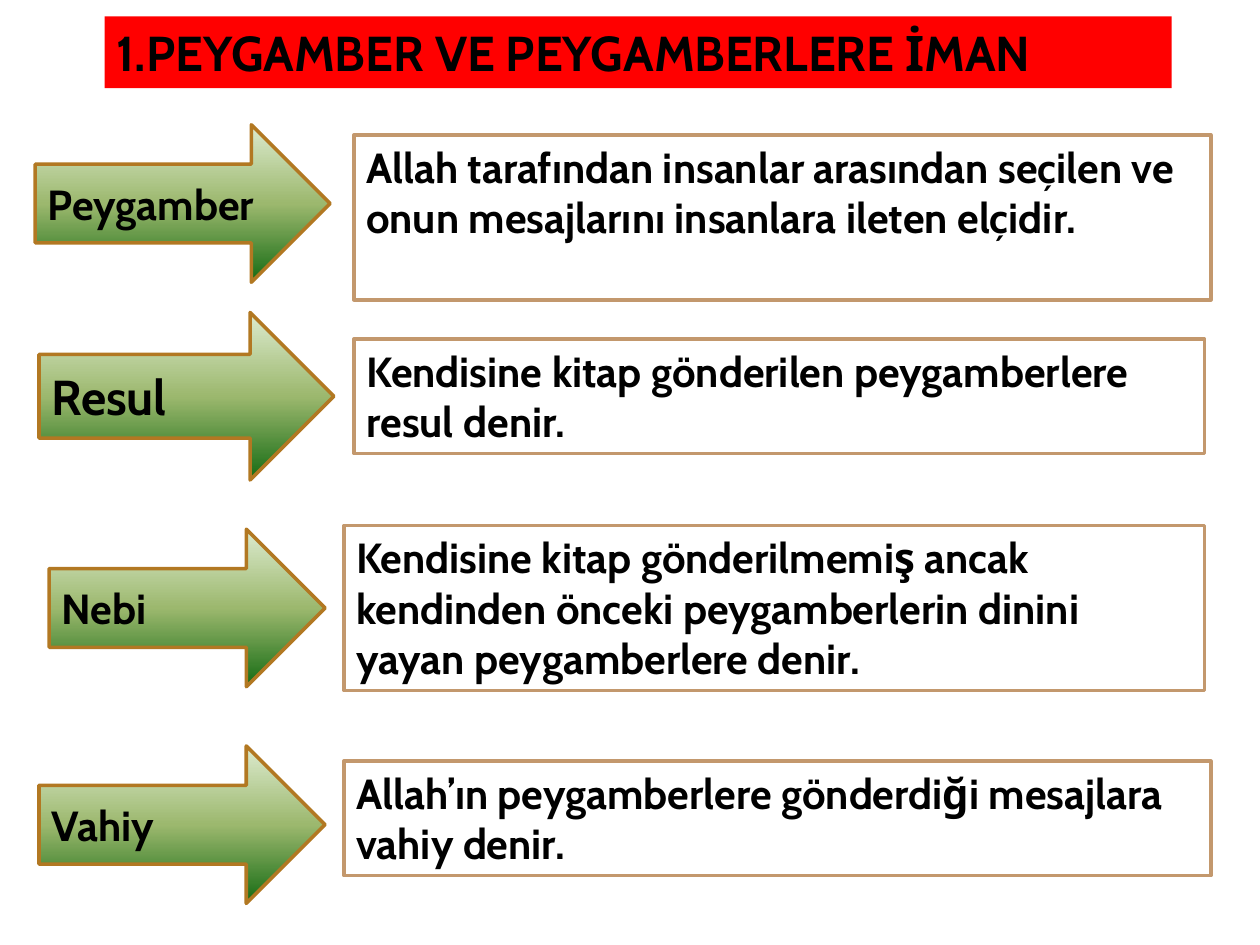
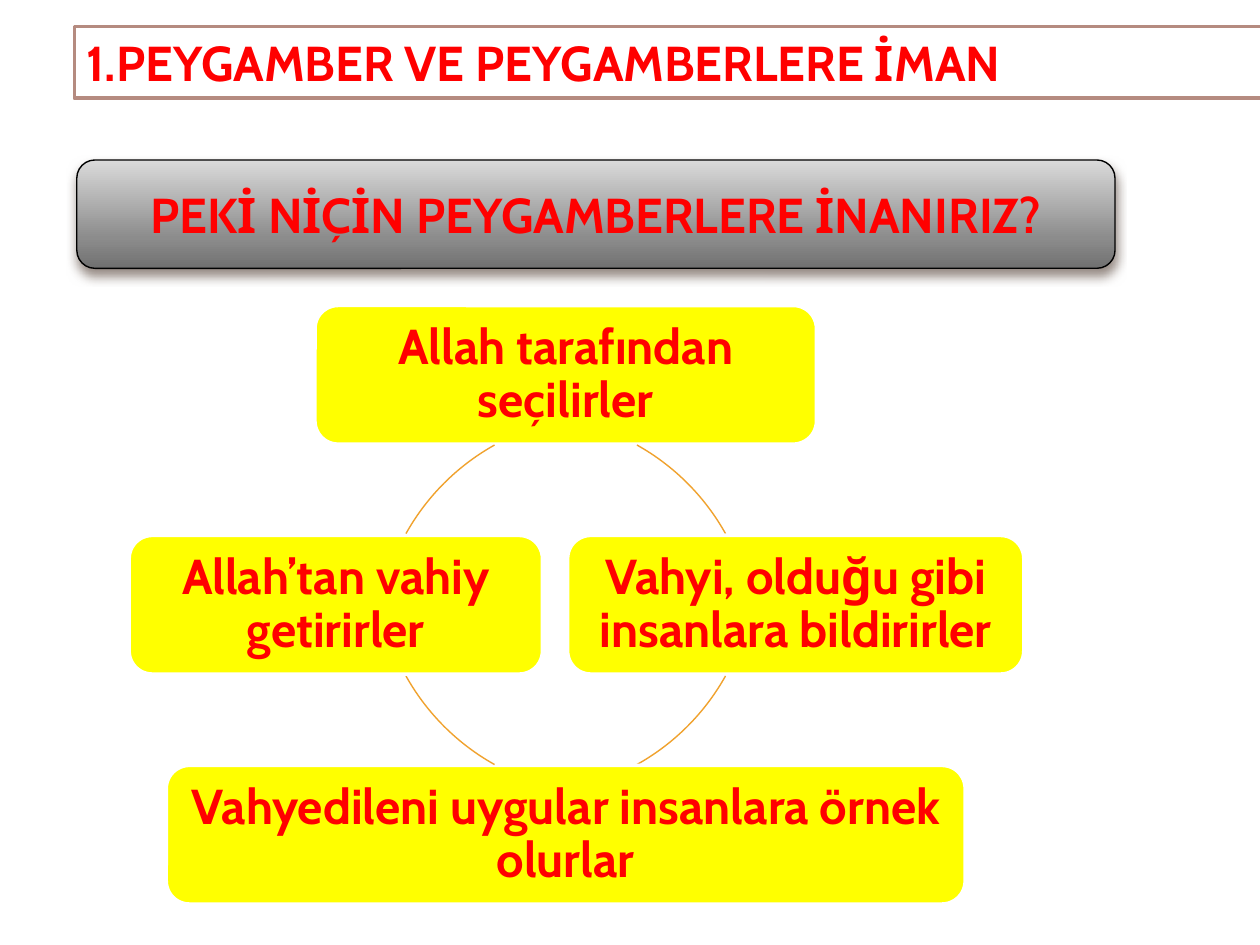
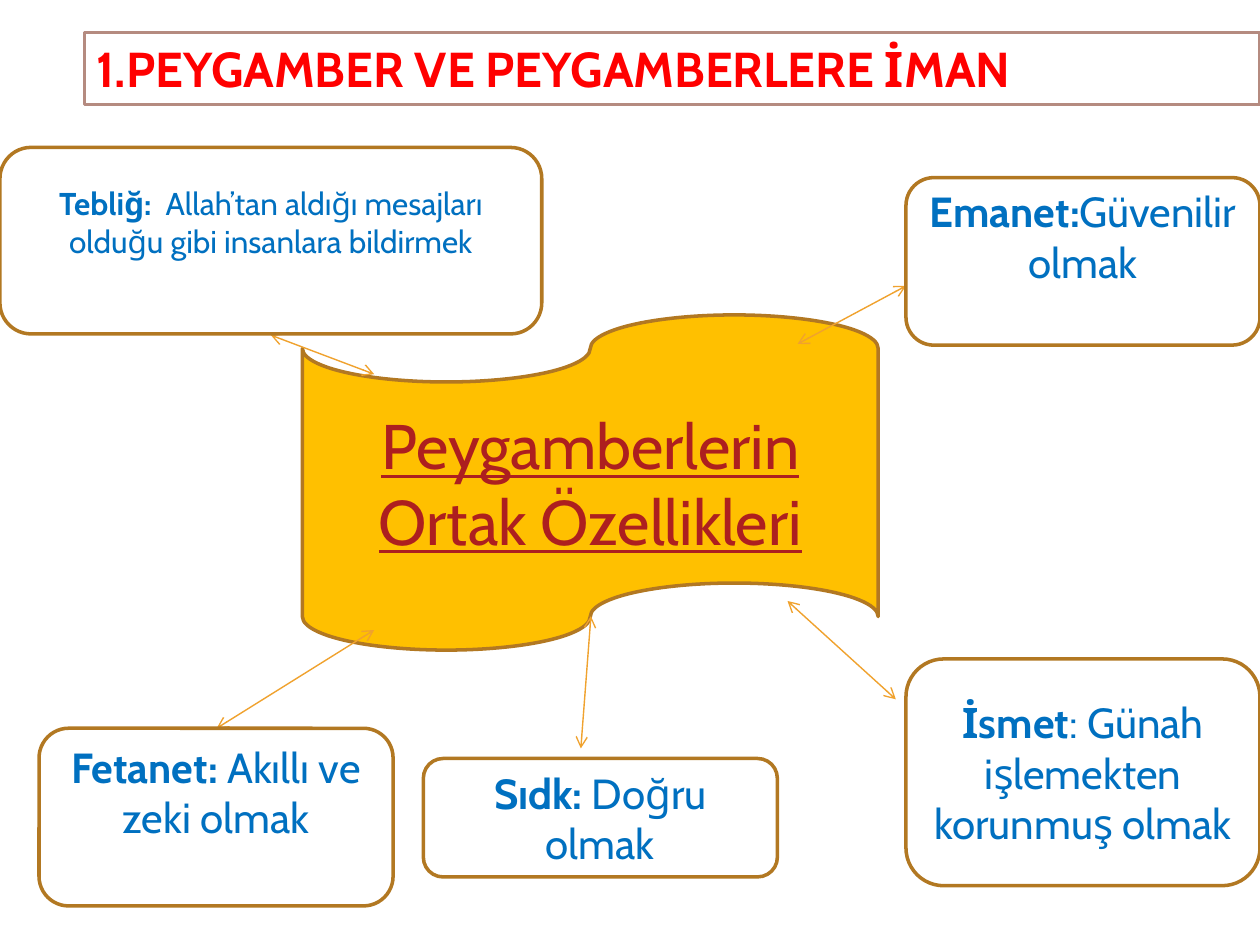
from lxml.etree import SubElement
from pptx import Presentation
from pptx.dml.color import RGBColor
from pptx.enum.shapes import MSO_CONNECTOR, MSO_SHAPE
from pptx.enum.text import MSO_ANCHOR, PP_ALIGN
from pptx.oxml.ns import qn
from pptx.util import Inches, Pt

# Shared style
FONT = "Cabin"
BLACK, WHITE, RED, BLUE = "000000", "FFFFFF", "FF0000", "0070C0"
BROWN, TAN, ROSE, AMBER = "B27822", "C3986D", "B58B80", "F0A22E"
YELLOW, GOLD, WINE = "FFFF00", "FFC000", "AD1F1F"
GREENS = [(0, "DDEBCF"), (50, "9CB86E"), (100, "156B13")]
GREYS = [(0, "DADADA"), (72, "8C8C8C"), (100, "707070")]
TITLE = "1.PEYGAMBER VE PEYGAMBERLERE İMAN"
COLS, ROWS = 100, 75
WIDE, HIGH = Inches(10), Inches(7.5)


def color(code):
    return RGBColor.from_string(code)


def write(shape, runs, size=24, ink=BLACK, bold=True, line=False,
          align=PP_ALIGN.LEFT, anchor=MSO_ANCHOR.MIDDLE, space=None,
          pad=(0.1, 0.05, 0.1, 0.05)):
    """Fill a shape with one paragraph; runs is a string or (text, bold) pairs."""
    frame = shape.text_frame
    frame.word_wrap = True
    frame.vertical_anchor = anchor
    (frame.margin_left, frame.margin_top,
     frame.margin_right, frame.margin_bottom) = map(Inches, pad)
    para = frame.paragraphs[0]
    para.alignment = align
    if space:
        para.line_spacing = space
    for words, thick in [(runs, bold)] if isinstance(runs, str) else runs:
        run = para.add_run()
        run.text = words
        font = run.font
        font.name, font.size, font.bold = FONT, Pt(size), thick
        font.underline = line
        font.color.rgb = color(ink)


class Deck:
    """Holds the file, the current slide and a 100 by 75 grid."""

    def __init__(self):
        self.file = Presentation()
        self.file.slide_width, self.file.slide_height = WIDE, HIGH

    def page(self):
        self.slide = self.file.slides.add_slide(self.file.slide_layouts[6])

    def x(self, col):
        return round(col * WIDE / COLS)

    def y(self, row):
        return round(row * HIGH / ROWS)

    def shape(self, kind, box, fill=None, edge=None, width=2):
        left, top, wide, high = box
        item = self.slide.shapes.add_shape(
            kind, self.x(left), self.y(top), self.x(wide), self.y(high))
        item.shadow.inherit = False
        if fill is None:
            item.fill.background()
        elif isinstance(fill, list):
            self.blend(item, fill)
        else:
            item.fill.solid()
            item.fill.fore_color.rgb = color(fill)
        if edge:
            item.line.color.rgb = color(edge)
            item.line.width = Pt(width)
        else:
            item.line.fill.background()
        return item

    def blend(self, item, stops):
        item.fill.gradient()
        item.fill.gradient_angle = 270
        group = item.element.spPr.find(".//" + qn("a:gsLst"))
        for old in list(group):
            group.remove(old)
        for pos, code in stops:
            stop = SubElement(group, qn("a:gs"), pos=str(pos * 1000))
            SubElement(stop, qn("a:srgbClr"), val=code)

    def shade(self, item, code, alpha, blur, dist):
        group = item.element.spPr.find(qn("a:effectLst"))
        drop = SubElement(group, qn("a:outerShdw"), blurRad=str(Pt(blur)),
                          dist=str(Pt(dist)), dir="5400000", rotWithShape="0")
        tone = SubElement(drop, qn("a:srgbClr"), val=code)
        SubElement(tone, qn("a:alpha"), val=str(alpha * 1000))

    def title(self, left, top, wide, fill=WHITE, edge=ROSE, ink=RED):
        bar = self.shape(MSO_SHAPE.RECTANGLE, (left, top, wide, 5.7), fill, edge)
        write(bar, TITLE, size=28, ink=ink, anchor=MSO_ANCHOR.TOP)

    def term(self, word, box, size):
        arrow = self.shape(MSO_SHAPE.RIGHT_ARROW, box, GREENS, BROWN)
        write(arrow, word, size=size)

    def note(self, words, box):
        card = self.shape(MSO_SHAPE.RECTANGLE, box, WHITE, TAN)
        write(card, words, anchor=MSO_ANCHOR.TOP)

    def node(self, words, mid, row, wide):
        box = mid - wide / 2, row - 5.5, wide, 11
        item = self.shape(MSO_SHAPE.ROUNDED_RECTANGLE, box, YELLOW, WHITE)
        write(item, words, size=28, ink=RED, align=PP_ALIGN.CENTER,
              space=0.9, pad=(0.12,) * 4)

    def arc(self, mid, row, radius, start, end):
        box = mid - radius, row - radius, 2 * radius, 2 * radius
        item = self.shape(MSO_SHAPE.ARC, box, None, AMBER, 0.79)
        # Angles are stored in 60000ths of a degree, adjustments in 100000ths
        item.adjustments[0], item.adjustments[1] = start * 0.6, end * 0.6

    def trait(self, name, words, box, size=24, rise=0):
        item = self.shape(MSO_SHAPE.ROUNDED_RECTANGLE, box, WHITE, BROWN)
        write(item, [(name, True), (words, False)], size=size, ink=BLUE,
              align=PP_ALIGN.CENTER, pad=(0.1, 0.05, 0.1, 0.05 + rise))

    def link(self, x1, y1, x2, y2):
        item = self.slide.shapes.add_connector(
            MSO_CONNECTOR.STRAIGHT, self.x(x1), self.y(y1), self.x(x2), self.y(y2))
        item.line.color.rgb = color(AMBER)
        item.line.width = Pt(0.79)
        props = item.element.spPr
        for end in ("a:headEnd", "a:tailEnd"):
            SubElement(props.find(qn("a:ln")), qn(end), type="arrow")
        SubElement(props, qn("a:effectLst"))


def terms(deck):
    deck.page()
    deck.title(8.3, 1.3, 84.7, fill=RED, edge=None, ink=BLACK)
    rows = [
        ("Peygamber", 24, (2.8, 9.9, 23.4, 12.5), (28.1, 10.7, 68, 13.1),
         "Allah tarafından insanlar arasından seçilen ve onun mesajlarını "
         "insanlara ileten elçidir."),
        ("Resul", 28, (3.1, 24.8, 23.4, 13.3), (28.1, 26.9, 67.5, 9.1),
         "Kendisine kitap gönderilen peygamberlere resul denir."),
        ("Nebi", 24, (3.9, 42, 21.9, 12.5), (27.3, 41.7, 68.3, 13.1),
         "Kendisine kitap gönderilmemiş ancak kendinden önceki "
         "peygamberlerin dinini yayan peygamberlere denir."),
        ("Vahiy", 24, (3.1, 59.2, 22.7, 12.5), (27.3, 60.4, 68.8, 9.1),
         "Allah’ın peygamberlere gönderdiği mesajlara vahiy denir."),
    ]
    for word, size, spot, box, words in rows:
        deck.term(word, spot, size)
        deck.note(words, box)


def cycle(deck):
    deck.page()
    ask = deck.shape(MSO_SHAPE.ROUNDED_RECTANGLE, (6.1, 12.7, 82.4, 8.6),
                     GREYS, BLACK, 0.79)
    deck.shade(ask, "4E3B30", 60, 6, 4)
    write(ask, "PEKİ NİÇİN PEYGAMBERLERE İNANIRIZ?", size=28, ink=RED,
          align=PP_ALIGN.CENTER)
    deck.title(5.9, 2.1, 95.7)

    # Four nodes clockwise from the top, each followed by its arc
    mid, row, radius, shift = 44.9, 48, 18.25, 3.25
    steps = [
        ("Allah tarafından seçilirler", 39.8, 0, -1),
        ("Vahyi, olduğu gibi insanlara bildirirler", 36.2, 1, 0),
        ("Vahyedileni uygular insanlara örnek olurlar", 63.4, 0, 1),
        ("Allah’tan vahiy getirirler", 32.8, -1, 0),
    ]
    for i, (words, wide, dx, dy) in enumerate(steps):
        deck.node(words, mid + dx * radius, row + dy * radius, wide)
        nx, ny = steps[(i + 1) % 4][2:]
        start = (299.2 + 90 * i) % 360
        deck.arc(mid - shift * (dx + nx), row - shift * (dy + ny), radius,
                 start, start + 31.6)


def traits(deck):
    deck.page()
    deck.title(6.7, 2.6, 93.3)
    hub = deck.shape(MSO_SHAPE.FLOWCHART_PUNCHED_TAPE, (24, 25, 45.7, 26.6),
                     GOLD, BROWN)
    write(hub, "Peygamberlerin Ortak Özellikleri", size=36, ink=WINE,
          bold=False, line=True, align=PP_ALIGN.CENTER)
    for ends in [(63.3, 27.3, 71.9, 22.7), (62.5, 47.7, 71.1, 55.5),
                 (29.7, 29.7, 21.5, 26.6), (29.7, 50, 17.2, 57.8),
                 (46.9, 48.9, 46.1, 59.4)]:
        deck.link(*ends)
    deck.trait("Emanet:", "Güvenilir olmak", (71.9, 14.1, 28.1, 13.3), rise=0.4)
    deck.trait("İsmet", ": Günah işlemekten korunmuş olmak",
               (71.9, 52.3, 28.1, 18))
    deck.trait("Sıdk: ", "Doğru olmak", (33.6, 60.2, 28.1, 9.4))
    deck.trait("Fetanet: ", "Akıllı ve zeki olmak", (3.1, 57.8, 28.1, 14.1),
               rise=0.4)
    deck.trait("Tebliğ:  ", "Allah’tan aldığı mesajları olduğu gibi insanlara "
               "bildirmek", (0, 11.7, 43, 14.8), size=18, rise=0.3)


def main():
    deck = Deck()
    for build in (terms, cycle, traits):
        build(deck)
    deck.file.save("out.pptx")


if __name__ == "__main__":
    main()
